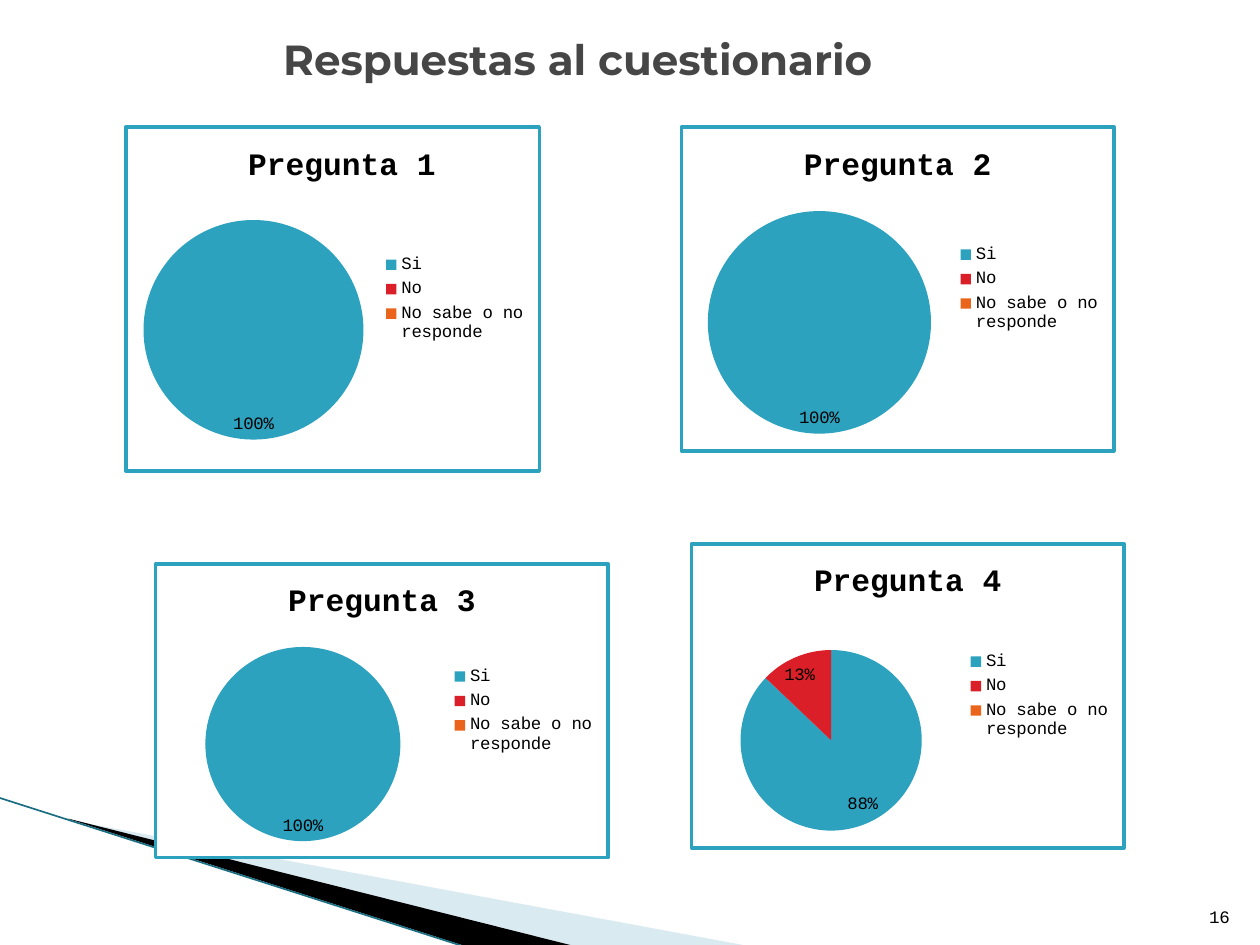
from lxml import etree
from pptx import Presentation
from pptx.chart.data import CategoryChartData
from pptx.dml.color import RGBColor
from pptx.enum.chart import XL_CHART_TYPE, XL_LABEL_POSITION, XL_LEGEND_POSITION
from pptx.enum.shapes import MSO_CONNECTOR
from pptx.enum.text import MSO_ANCHOR, PP_ALIGN
from pptx.oxml import parse_xml
from pptx.oxml.ns import nsdecls, qn
from pptx.util import Pt

PIE = XL_CHART_TYPE.PIE
BEST_FIT = XL_LABEL_POSITION.BEST_FIT
LEGEND_RIGHT = XL_LEGEND_POSITION.RIGHT
STRAIGHT = MSO_CONNECTOR.STRAIGHT
MIDDLE, BOTTOM = MSO_ANCHOR.MIDDLE, MSO_ANCHOR.BOTTOM
CENTER, RIGHT = PP_ALIGN.CENTER, PP_ALIGN.RIGHT

COLORS = {"yes": "2DA2BF", "no": "DA1F28", "unknown": "EB641B", "white": "FFFFFF",
          "black": "000000", "title": "464646", "band": "A0CBDC", "edge": "1B6E82"}
BODY_FONT, TITLE_FONT = "Courier New", "Montserrat"
ANSWERS = {"Si": "yes", "No": "no", "No sabe o no responde": "unknown"}

# title, values, chart box, pie (left, top, diameter) within the box
QUESTIONS = [
    (" Pregunta 1", (100, 0, 0), (70.9, 71.5, 238.3, 198.7), (10.2, 53.8, 126.8)),
    ("Pregunta 2", (100, 0, 0), (388.4, 71.5, 249.1, 187.2), (15.2, 48.7, 128.6)),
    ("Pregunta 3", (100, 0, 0), (87.9, 321.2, 260.6, 169.9), (28.7, 48.1, 112.3)),
    ("Pregunta 4", (88, 13, 0), (394.2, 309.8, 249.1, 175.7), (28.2, 61.4, 104.4)),
]


def rgb(name):
    return RGBColor.from_string(COLORS[name])


def set_font(font, color, **values):
    for key, value in values.items():
        setattr(font, key, value)
    font.color.rgb = rgb(color)


def add_text(s, box, text, anchor, align, color, **font):
    tf = s.shapes.add_textbox(*map(Pt, box)).text_frame
    tf.word_wrap = True
    tf.vertical_anchor = anchor
    p = tf.paragraphs[0]
    p.alignment = align
    r = p.add_run()
    r.text = text
    set_font(r.font, color, **font)


def add_band(s, points, color, opacity=None):
    builder = s.shapes.build_freeform(Pt(points[0][0]), Pt(points[0][1]), scale=1.0)
    builder.add_line_segments([(Pt(x), Pt(y)) for x, y in points[1:]], close=True)
    sp = builder.convert_to_shape()
    sp.shadow.inherit = False
    sp.fill.solid()
    sp.fill.fore_color.rgb = rgb(color)
    sp.line.fill.background()
    if opacity:
        clr = sp.fill._xPr.find(".//" + qn("a:srgbClr"))
        etree.SubElement(clr, qn("a:alpha")).set("val", str(opacity * 1000))


def add_corner_bands(s, left, top):
    """Slanted bands running from the left edge to the bottom of the slide."""
    for points, color, opacity in [
        ([(40, 2), (429, 74), (329, 74), (40, 1.5)], "band", 40),
        ([(39, 1), (329, 74), (268, 74.5), (40, 1.5)], "black", None),
    ]:
        add_band(s, [(left + x, top + 11 + y) for x, y in points], color, opacity)
    line = s.shapes.add_connector(STRAIGHT, Pt(left - 0.7), Pt(top),
                                  Pt(left + 267.1), Pt(top + 85.7))
    line.line.color.rgb = rgb("edge")
    line.line.width = Pt(0.95)
    etree.SubElement(line._element.spPr, qn("a:effectLst"))


def frame_chart(chart):
    """White background with a coloured border."""
    chart._chartSpace.find(qn("c:chart")).addnext(parse_xml(
        f'<c:spPr {nsdecls("c", "a")}>'
        f'<a:solidFill><a:srgbClr val="{COLORS["white"]}"/></a:solidFill>'
        f'<a:ln w="{Pt(2)}"><a:solidFill><a:srgbClr val="{COLORS["yes"]}"/>'
        '</a:solidFill></a:ln></c:spPr>'))


def place_pie(chart, box, pie):
    left, top, size = pie
    width, height = box[2:]
    area = chart._chartSpace.find(".//" + qn("c:plotArea"))
    for old in area.findall(qn("c:layout")):
        area.remove(old)
    fractions = {"x": left / width, "y": top / height,
                 "w": size / width, "h": size / height}
    values = "".join(f'<c:{k} val="{v:.4f}"/>' for k, v in fractions.items())
    area.insert(0, parse_xml(
        f'<c:layout {nsdecls("c")}><c:manualLayout><c:layoutTarget val="inner"/>'
        f'<c:xMode val="edge"/><c:yMode val="edge"/>{values}'
        '</c:manualLayout></c:layout>'))


def label_slices(series, values):
    """Percent labels on every slice that is not empty."""
    labels = series.data_labels
    for key, value in {"show_value": True, "number_format": '0"%"',
                       "number_format_is_linked": False,
                       "position": BEST_FIT}.items():
        setattr(labels, key, value)
    empty = [i for i, value in enumerate(values) if not value]
    for place, i in enumerate(empty):
        labels._element.insert(place, parse_xml(
            f'<c:dLbl {nsdecls("c")}><c:idx val="{i}"/><c:delete val="1"/></c:dLbl>'))


def add_question_chart(s, title, values, box, pie):
    data = CategoryChartData()
    data.categories = list(ANSWERS)
    data.add_series("Series 1", values)
    chart = s.shapes.add_chart(PIE, *map(Pt, box), data).chart
    set_font(chart.font, "black", name=BODY_FONT, size=Pt(10))
    frame_chart(chart)

    chart.has_title = True
    p = chart.chart_title.text_frame.paragraphs[0]
    r = p.add_run()
    r.text = title
    set_font(r.font, "black", name=BODY_FONT, size=Pt(18), bold=True)
    chart.chart_title.include_in_layout = False

    chart.has_legend = True
    chart.legend.position = LEGEND_RIGHT
    chart.legend.include_in_layout = False

    chart.plots[0].vary_by_categories = True
    series = chart.plots[0].series[0]
    for i, color in enumerate(ANSWERS.values()):
        fill = series.points[i].format.fill
        fill.solid()
        fill.fore_color.rgb = rgb(color)
    label_slices(series, values)
    place_pie(chart, box, pie)


def main():
    prs = Presentation()
    prs.slide_width, prs.slide_height = Pt(720), Pt(540)
    s = prs.slides.add_slide(prs.slide_layouts[6])
    add_corner_bands(s, 0, 455.8)
    add_text(s, (36, 18, 588.24, 30.96), "Respuestas al cuestionario", MIDDLE, CENTER,
             "title", name=TITLE_FONT, size=Pt(24), bold=True)
    for question in QUESTIONS:
        add_question_chart(s, *question)
    add_text(s, (681.12, 504.72, 28.8, 28.8), "16", BOTTOM, RIGHT,
             "black", name=BODY_FONT, size=Pt(10))
    prs.save("out.pptx")


if __name__ == "__main__":
    main()
